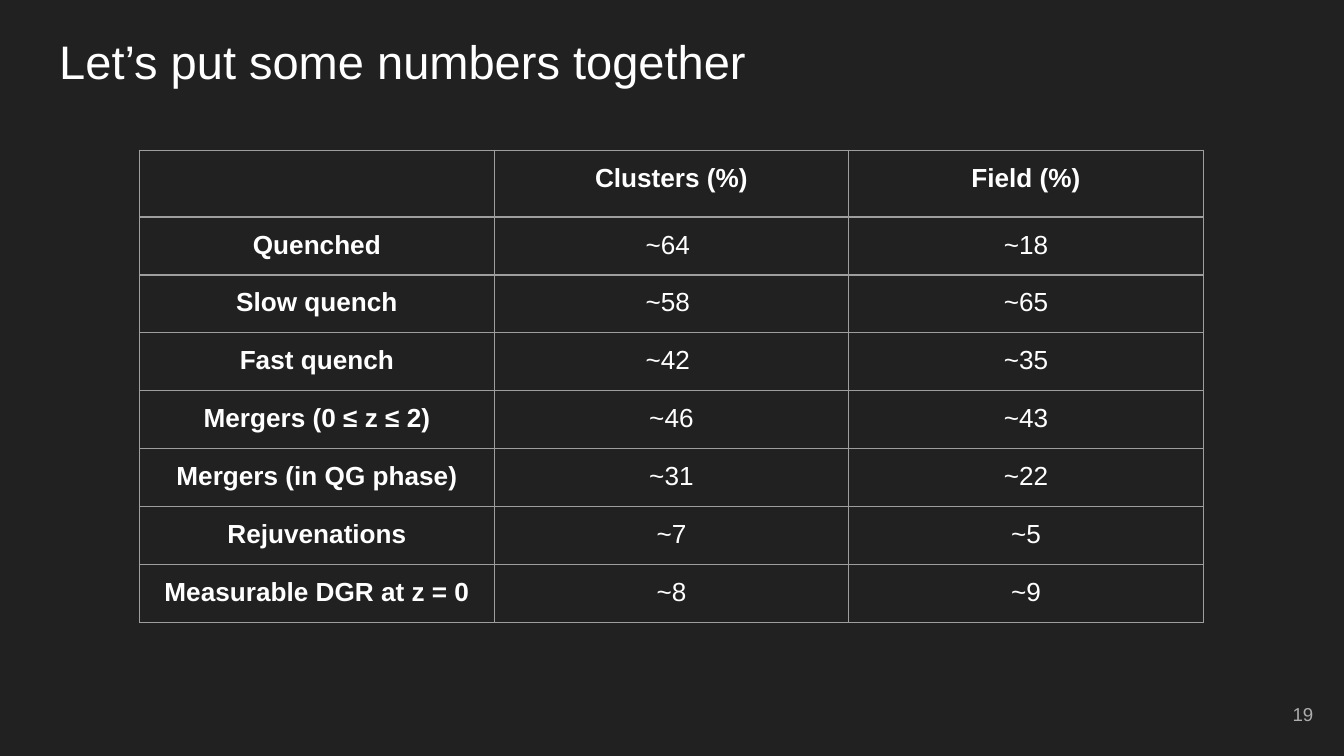
from lxml.etree import SubElement as Sub
from pptx import Presentation
from pptx.dml.color import RGBColor
from pptx.enum.text import MSO_ANCHOR as Anchor, PP_ALIGN as Align
from pptx.oxml.ns import qn
from pptx.util import Cm, Pt

ROWS = [
    ("", "Clusters (%)", "Field (%)"),
    ("Quenched", "~64 ", "~18"),
    ("Slow quench", "~58 ", "~65"),
    ("Fast quench", "~42 ", "~35"),
    ("Mergers (0 ≤ z ≤ 2)", "~46", "~43"),
    ("Mergers (in QG phase)", "~31", "~22"),
    ("Rejuvenations", "~7", "~5"),
    ("Measurable DGR at z = 0", "~8", "~9"),
]


def color(code):
    return RGBColor.from_string(code)


class Deck:
    face = "Arial"
    back, ink, grey, rule = "212121", "FFFFFF", "ADADAD", "9E9E9E"
    pad = Cm(0.25)

    def __init__(self, slide):
        self.slide = slide
        fill = slide.background.fill
        fill.solid()
        fill.fore_color.rgb = color(self.back)

    def label(self, frame, text, size, ink, align, bold=False):
        para = frame.paragraphs[0]
        para.text = text
        para.alignment = align
        font = para.font
        font.name, font.size, font.bold = self.face, Pt(size), bold
        font.color.rgb = color(ink)

    def inset(self, item):
        item.margin_left = item.margin_right = self.pad
        item.margin_top = item.margin_bottom = self.pad

    def text(self, box, text, size, ink, align, anchor):
        frame = self.slide.shapes.add_textbox(*map(Cm, box)).text_frame
        frame.word_wrap = True
        frame.vertical_anchor = anchor
        self.inset(frame)
        self.label(frame, text, size, ink, align)

    def border(self, cell):
        props = cell._tc.get_or_add_tcPr()
        for side in ("a:lnL", "a:lnR", "a:lnT", "a:lnB"):
            line = Sub(props, qn(side), w=str(Pt(0.75)))
            Sub(Sub(line, qn("a:solidFill")), qn("a:srgbClr"), val=self.rule)

    def table(self, left, top, wide, head, high, rows):
        count, cols = len(rows), len(rows[0])
        grid = self.slide.shapes.add_table(
            count, cols, Cm(left), Cm(top),
            Cm(wide * cols), Cm(head + high * (count - 1))).table
        grid.first_row = grid.horz_banding = False
        for col in grid.columns:
            col.width = Cm(wide)
        for r, row in enumerate(rows):
            grid.rows[r].height = Cm(high if r else head)
            for c, text in enumerate(row):
                cell = grid.cell(r, c)
                self.inset(cell)
                self.border(cell)
                cell.fill.background()
                # Headings sit in the first row and column
                if text:
                    self.label(cell.text_frame, text, 14, self.ink,
                               Align.CENTER, bold=r == 0 or c == 0)


def main():
    prs = Presentation()
    prs.slide_width, prs.slide_height = Cm(25.4), Cm(14.29)
    deck = Deck(prs.slides.add_slide(prs.slide_layouts[6]))

    # Title
    deck.text((0.87, 0.33, 23.67, 1.6), "Let’s put some numbers together",
              25.2, deck.ink, Align.LEFT, Anchor.BOTTOM)

    # Cluster and field shares
    deck.table(2.64, 2.84, 6.7, 1.22, 1.06, ROWS)

    # Page number
    deck.text((23.55, 12.95, 1.52, 1.09), "19",
              10, deck.grey, Align.RIGHT, Anchor.MIDDLE)

    prs.save("out.pptx")


if __name__ == "__main__":
    main()
